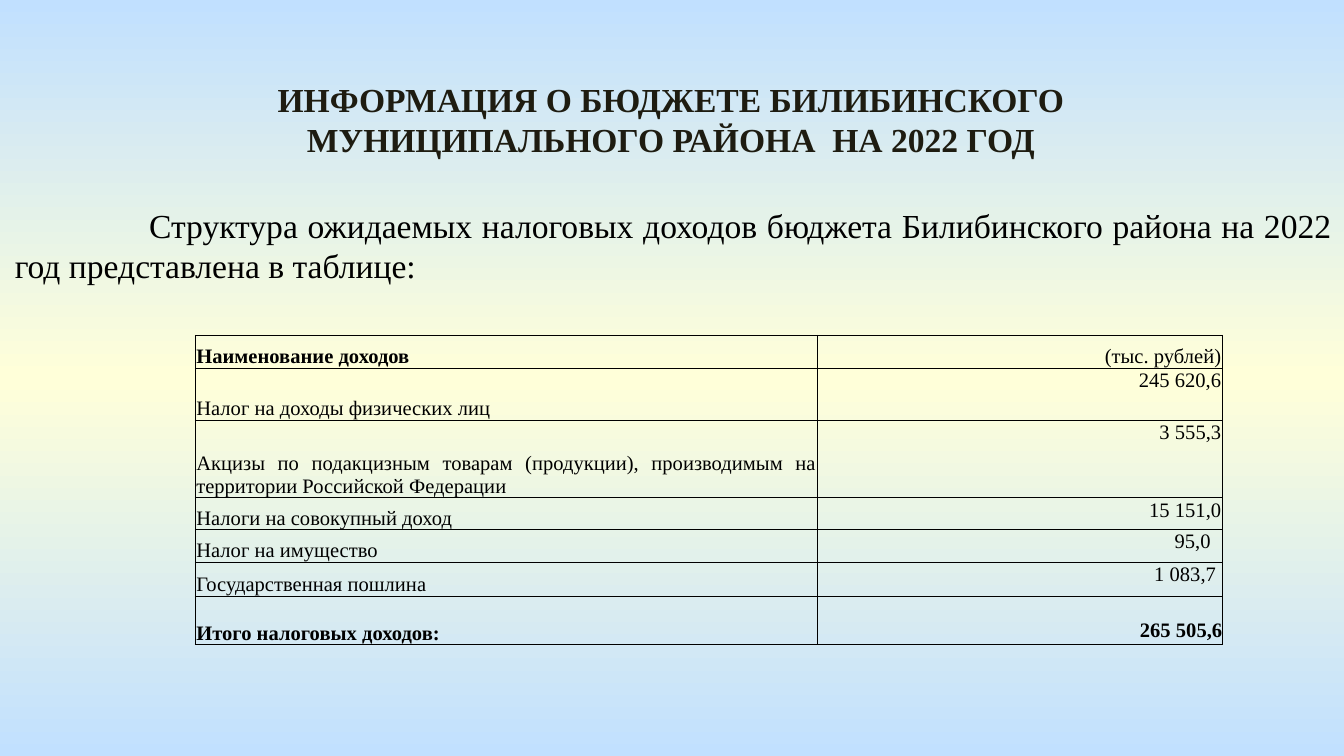
import copy

import pptx
import pptx.dml.color
import pptx.enum.text
import pptx.oxml.ns
import pptx.util
from lxml import etree

Cm = pptx.util.Cm
Pt = pptx.util.Pt
RGBColor = pptx.dml.color.RGBColor
Align = pptx.enum.text.PP_ALIGN
Anchor = pptx.enum.text.MSO_ANCHOR
qn = pptx.oxml.ns.qn

BLACK = RGBColor(0x00, 0x00, 0x00)
TITLE_BROWN = RGBColor(0x1E, 0x1C, 0x11)
SKY = RGBColor(0xC1, 0xE0, 0xFF)
CREAM = RGBColor(0xFF, 0xFF, 0xD9)


class BudgetPage:
    """Holds the style and the current slide."""

    font_name = "Times New Roman"
    text_size = Pt(18)
    table_size = Pt(11)
    border_width = Pt(0.5)
    cell_inset = Cm(0.02)

    def __init__(self, deck):
        self.page = deck.slides.add_slide(deck.slide_layouts[6])

    def background(self, edge, middle):
        fill = self.page.background.fill
        fill.gradient()
        fill.gradient_angle = 270
        stop_list = self.page.element.find(".//" + qn("a:gsLst"))
        stop_list.insert(1, copy.deepcopy(stop_list[0]))
        for stop, color, position in zip(fill.gradient_stops, (edge, middle, edge), (0, 0.5, 1)):
            stop.color.rgb = color
            stop.position = position

    def style(self, para, size, align, color=BLACK, bold=False):
        para.alignment = align
        para.font.name = self.font_name
        para.font.size = size
        para.font.bold = bold
        para.font.color.rgb = color

    def text(self, left, top, width, height, words, align, color=BLACK, bold=False, indent=0):
        box = self.page.shapes.add_textbox(left, top, width, height)
        frame = box.text_frame
        frame.word_wrap = True
        frame.auto_size = pptx.enum.text.MSO_AUTO_SIZE.SHAPE_TO_FIT_TEXT
        para = frame.paragraphs[0]
        para.text = words
        self.style(para, self.text_size, align, color, bold)
        if indent:
            para._p.get_or_add_pPr().set("indent", str(indent))

    def table(self, left, top, widths, heights):
        frame = self.page.shapes.add_table(
            len(heights), len(widths), left, top, sum(widths), sum(heights))
        table = frame.table
        table.first_row = table.horz_banding = False
        for column, width in zip(table.columns, widths):
            column.width = width
        for row, height in zip(table.rows, heights):
            row.height = height
        return table

    def cell(self, cell, words, align, anchor, bold=False, top=None, right=None):
        cell.text = words
        self.style(cell.text_frame.paragraphs[0], self.table_size, align, bold=bold)
        cell.vertical_anchor = anchor
        cell.margin_left = self.cell_inset
        cell.margin_top = self.cell_inset if top is None else top
        cell.margin_right = self.cell_inset if right is None else right
        cell.margin_bottom = 0
        cell.fill.background()
        self.borders(cell)

    def borders(self, cell):
        properties = cell._tc.get_or_add_tcPr()
        for index, side in enumerate(("a:lnL", "a:lnR", "a:lnT", "a:lnB")):
            line = etree.Element(qn(side), w=str(self.border_width))
            fill = etree.SubElement(line, qn("a:solidFill"))
            etree.SubElement(fill, qn("a:srgbClr"), val=str(BLACK))
            properties.insert(index, line)


def main():
    deck = pptx.Presentation()
    deck.slide_width = Cm(25.4)
    deck.slide_height = Cm(14.29)
    budget = BudgetPage(deck)
    budget.background(SKY, CREAM)

    # Title and introduction
    budget.text(Cm(2.87), Cm(1.37), Cm(19.63), Cm(1.8),
                "ИНФОРМАЦИЯ О БЮДЖЕТЕ БИЛИБИНСКОГО МУНИЦИПАЛЬНОГО РАЙОНА  НА 2022 ГОД",
                Align.CENTER, TITLE_BROWN, bold=True)
    budget.text(Cm(0.03), Cm(3.74), Cm(25.4), Cm(1.8),
                "Структура ожидаемых налоговых доходов бюджета Билибинского района "
                "на 2022 год представлена в таблице:",
                Align.JUSTIFY, indent=Cm(2.54))

    # Tax revenue: name, amount, right inset of the amount
    revenues = [
        ("Налог на доходы физических лиц", "245 620,6", None),
        ("Акцизы по подакцизным товарам (продукции), производимым на территории "
         "Российской Федерации", "3 555,3", None),
        ("Налоги на совокупный доход", "15 151,0", None),
        ("Налог на имущество", "95,0", Cm(0.22)),
        ("Государственная пошлина", "1 083,7", Cm(0.12)),
    ]
    heights = [Cm(height) for height in (0.62, 0.98, 1.47, 0.6, 0.62, 0.64, 0.92)]
    table = budget.table(Cm(3.69), Cm(6.34), [Cm(11.76), Cm(7.65)], heights)

    # Heading row
    budget.cell(table.cell(0, 0), "Наименование доходов", Align.JUSTIFY, Anchor.BOTTOM, bold=True)
    budget.cell(table.cell(0, 1), "(тыс. рублей)", Align.RIGHT, Anchor.BOTTOM)

    # Revenue rows
    for row, (name, amount, right) in enumerate(revenues, start=1):
        budget.cell(table.cell(row, 0), name, Align.JUSTIFY, Anchor.BOTTOM)
        budget.cell(table.cell(row, 1), amount, Align.RIGHT, Anchor.TOP, right=right)

    # Total row
    total = len(revenues) + 1
    budget.cell(table.cell(total, 0), "Итого налоговых доходов:",
                Align.JUSTIFY, Anchor.BOTTOM, bold=True)
    budget.cell(table.cell(total, 1), "265 505,6", Align.RIGHT, Anchor.TOP,
                bold=True, top=Cm(0.43), right=0)

    deck.save("out.pptx")


if __name__ == "__main__":
    main()
